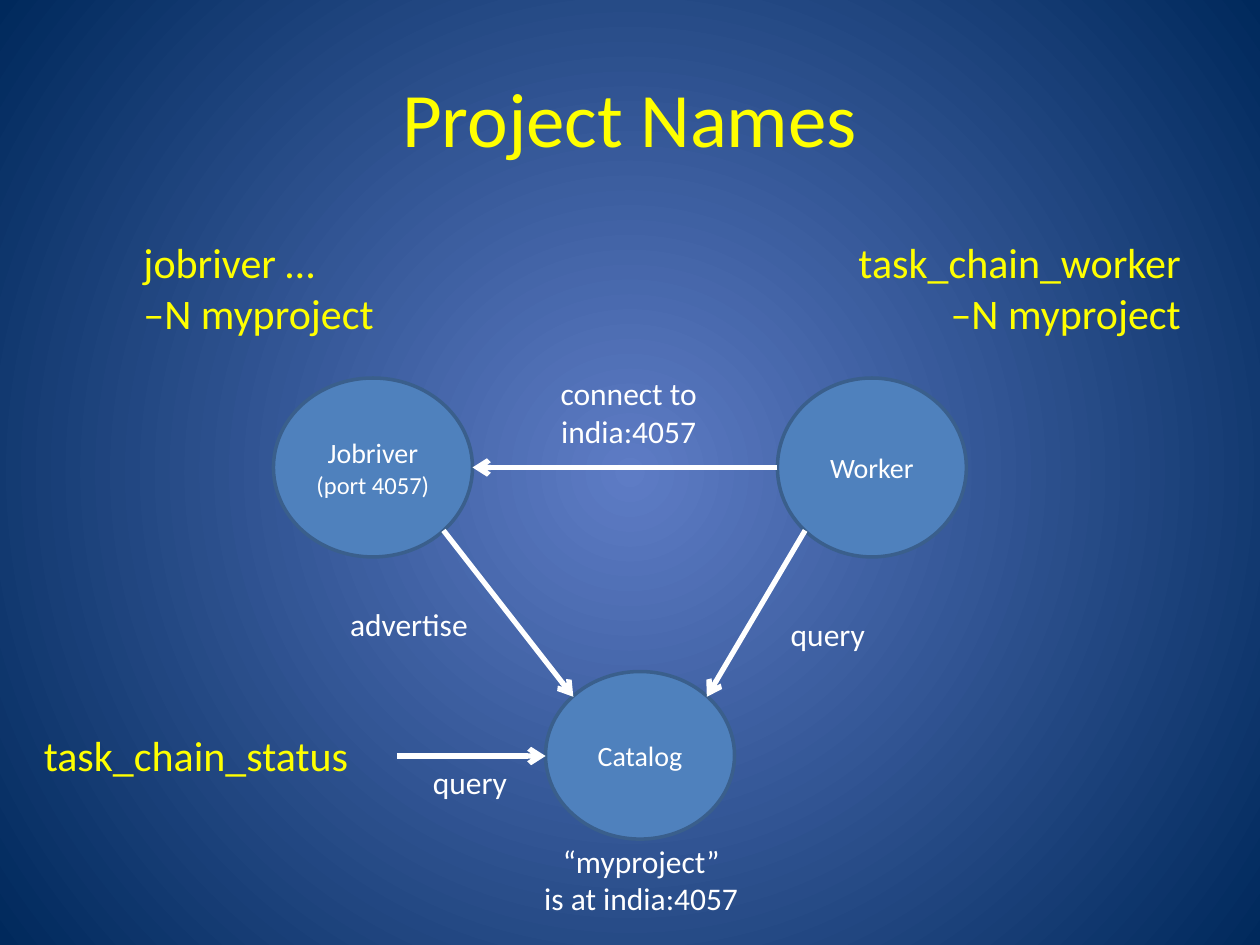
from lxml import etree
from pptx import Presentation
from pptx import util as u
from pptx.dml.color import RGBColor
from pptx.enum import shapes, text
from pptx.oxml import ns

PX = 9144
YELLOW, WHITE, BLUE, OUTLINE = "FFFF00", "FFFFFF", "4F81BD", "3A5F8C"
LEFT, CENTER, RIGHT = text.PP_ALIGN.LEFT, text.PP_ALIGN.CENTER, text.PP_ALIGN.RIGHT


def paint(color, value):
    color.rgb = RGBColor.from_string(value)


def write(frame, lines, sizes, color, align):
    for number, (line, size) in enumerate(zip(lines, sizes)):
        paragraph = frame.paragraphs[0] if number == 0 else frame.add_paragraph()
        paragraph.alignment = align
        words = paragraph.add_run()
        words.text = line
        for name, value in {"name": "Calibri", "size": u.Pt(size)}.items():
            setattr(words.font, name, value)
        paint(words.font.color, color)


deck = Presentation()
deck.slide_width, deck.slide_height = 1000 * PX, 750 * PX
slide = deck.slides.add_slide(deck.slide_layouts[6])

backdrop = slide.background.fill
backdrop.gradient()
for stop, color in zip(backdrop.gradient_stops, ["5E7CC5", "00295C"]):
    paint(stop.color, color)
gradient = slide.element.find(".//" + ns.qn("a:gradFill"))
gradient.remove(gradient.find(ns.qn("a:lin")))
glow = etree.SubElement(gradient, ns.qn("a:path"), {"path": "circle"})
etree.SubElement(glow, ns.qn("a:fillToRect"), dict.fromkeys("ltrb", "50000"))

nodes = [
    (["Worker"], [16], 617, 300, 150, 142),
    (["Catalog"], [16], 433, 533, 150, 133),
    (["Jobriver", "(port 4057)"], [16, 14], 217, 300, 158, 142),
]
for lines, sizes, *box in nodes:
    node = slide.shapes.add_shape(shapes.MSO_SHAPE.OVAL, *[n * PX for n in box])
    node.shadow.inherit = False
    node.fill.solid()
    paint(node.fill.fore_color, BLUE)
    paint(node.line.color, OUTLINE)
    node.line.width = u.Pt(2)
    node.text_frame.vertical_anchor = text.MSO_ANCHOR.MIDDLE
    write(node.text_frame, lines, sizes, WHITE, CENTER)

messages = [
    (617, 371, 375, 371),
    (352, 421, 455, 553),
    (639, 421, 561, 553),
    (315, 600, 433, 600),
]
for ends in messages:
    message = slide.shapes.add_connector(
        shapes.MSO_CONNECTOR.STRAIGHT, *[n * PX for n in ends])
    paint(message.line.color, WHITE)
    message.line.width = u.Pt(3)
    etree.SubElement(message.line._get_or_add_ln(), ns.qn("a:tailEnd"), {"type": "arrow"})
    etree.SubElement(message.element.spPr, ns.qn("a:effectLst"))

captions = [
    (["Project Names"], 44, YELLOW, CENTER, 50, 30, 900, 125),
    (["jobriver …", "–N myproject"], 24, YELLOW, LEFT, 104, 183, 205, 91),
    (["task_chain_worker", "–N myproject"], 24, YELLOW, RIGHT, 642, 183, 305, 91),
    (["task_chain_status"], 24, YELLOW, LEFT, 25, 574, 290, 51),
    (["connect to", "india:4057"], 18, WHITE, CENTER, 434, 292, 130, 71),
    (["advertise"], 18, WHITE, CENTER, 267, 475, 115, 40),
    (["query"], 18, WHITE, CENTER, 617, 483, 80, 40),
    (["query"], 18, WHITE, CENTER, 333, 601, 80, 40),
    (["“myproject”", "is at india:4057"], 18, WHITE, CENTER, 421, 663, 176, 71),
]
for lines, size, color, align, *box in captions:
    is_title = size == 44
    frame = slide.shapes.add_textbox(*[n * PX for n in box]).text_frame
    layout = {
        "word_wrap": is_title or align != CENTER,
        "auto_size": text.MSO_AUTO_SIZE.NONE if is_title else text.MSO_AUTO_SIZE.SHAPE_TO_FIT_TEXT,
        "vertical_anchor": text.MSO_ANCHOR.MIDDLE if is_title else text.MSO_ANCHOR.TOP,
    }
    for name, value in layout.items():
        setattr(frame, name, value)
    write(frame, lines, [size] * len(lines), color, align)

deck.save("out.pptx")
